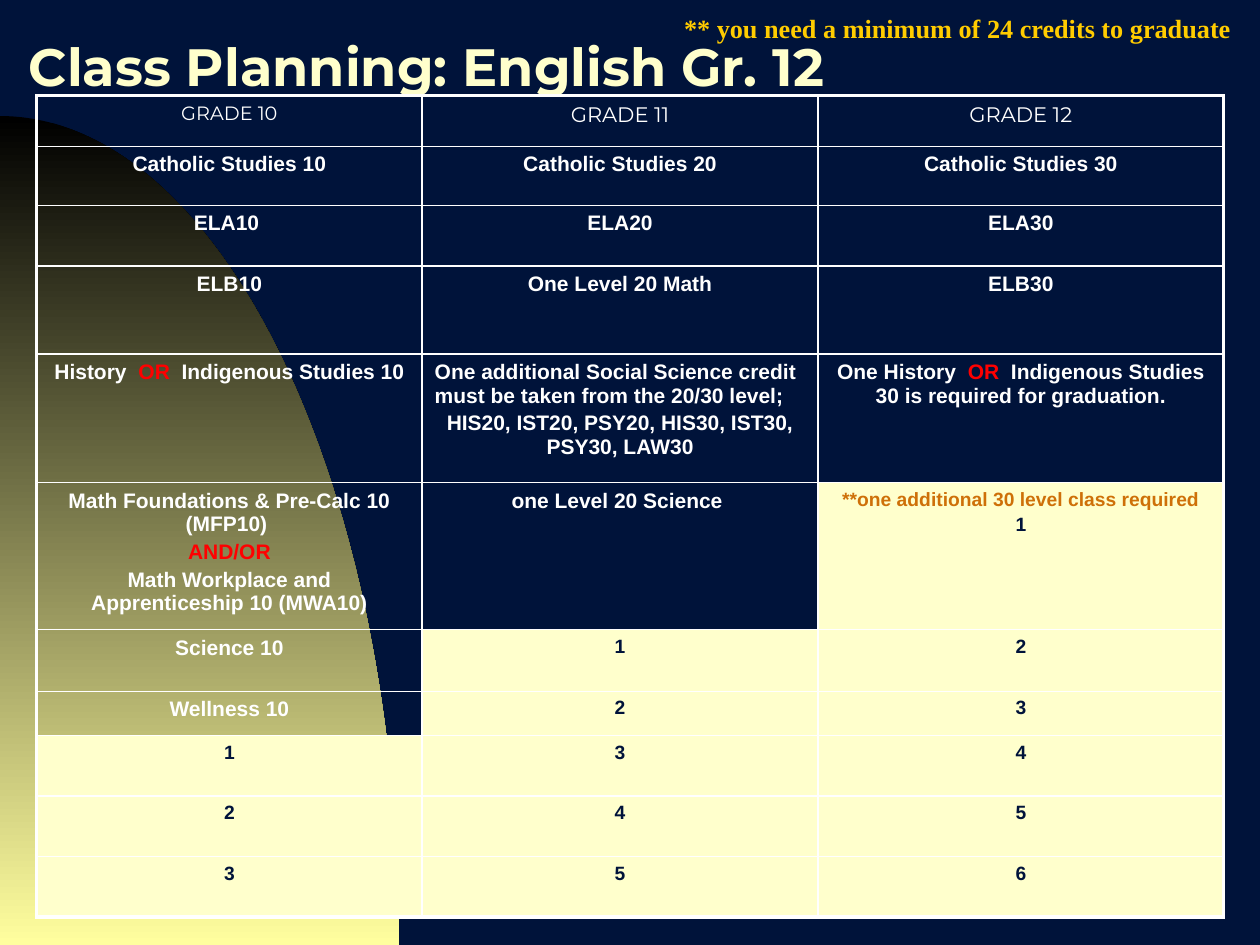
from dataclasses import dataclass
from math import cos, pi, sin

from lxml.etree import SubElement
from pptx import Presentation
from pptx.dml.color import RGBColor as RGB
from pptx.enum.text import MSO_ANCHOR as Anchor, PP_ALIGN as Align
from pptx.oxml.ns import qn
from pptx.util import Cm, Pt


@dataclass(frozen=True)
class Theme:
    navy: RGB = RGB(0x00, 0x13, 0x3A)
    cream: RGB = RGB(0xFF, 0xFF, 0xCC)
    white: RGB = RGB(0xFF, 0xFF, 0xFF)
    red: RGB = RGB(0xFF, 0x00, 0x00)
    orange: RGB = RGB(0xCE, 0x70, 0x08)
    gold: RGB = RGB(0xFF, 0xCC, 0x00)
    black: RGB = RGB(0x00, 0x00, 0x00)
    glow: RGB = RGB(0xFF, 0xFE, 0x9E)
    title_size: Pt = Pt(30)
    note_size: Pt = Pt(15)
    class_size: Pt = Pt(12)
    small_size: Pt = Pt(11)
    outer_line: Pt = Pt(2.25)
    inner_line: Pt = Pt(1)


theme = Theme()


def style(font, name, size, color, bold):
    font.name, font.size, font.bold = name, size, bold
    font.color.rgb = color


def set_border(cell, side, width):
    line = SubElement(cell._tc.get_or_add_tcPr(), qn(f"a:{side}"), w=str(width))
    SubElement(SubElement(line, qn("a:solidFill")), qn("a:srgbClr"), val=str(theme.white))


prs = Presentation()
prs.slide_width, prs.slide_height = Cm(25.4), Cm(19.05)
slide = prs.slides.add_slide(prs.slide_layouts[6])
slide.background.fill.solid()
slide.background.fill.fore_color.rgb = theme.navy

# Quarter ellipse rising from the lower left corner
radius_x, radius_y, steps = Cm(8.05), Cm(16.71), 90
arc = [(radius_x * sin(i * pi / 2 / steps),
        prs.slide_height - radius_y * cos(i * pi / 2 / steps)) for i in range(steps + 1)]
outline = slide.shapes.build_freeform(*arc[0])
outline.add_line_segments(arc[1:] + [(0, prs.slide_height)], close=True)
hill = outline.convert_to_shape()
hill.shadow.inherit = False
hill.line.fill.background()
hill.fill.gradient()
hill.fill.gradient_angle = 270
for stop, color, position in zip(hill.fill.gradient_stops, (theme.black, theme.glow), (0, 1)):
    stop.color.rgb = color
    stop.position = position

# Title
title = slide.shapes.add_textbox(Cm(0.33), Cm(0.81), Cm(21.59), Cm(1.32)).text_frame
title.word_wrap = True
title.vertical_anchor = Anchor.MIDDLE
heading = title.paragraphs[0]
heading.text = "Class Planning: English Gr. 12"
heading.line_spacing = 0.7
style(heading.font, "Montserrat", theme.title_size, theme.cream, True)

# Class plan: "|" encloses red words, "<" starts a left-aligned paragraph,
# and a cell that ends in a bare number is an elective slot
plan = [
    ("GRADE 10", "GRADE 11", "GRADE 12"),
    ("Catholic Studies 10", "Catholic Studies 20", "Catholic Studies 30"),
    ("ELA10 ", "ELA20", "ELA30"),
    ("ELB10", "One Level 20 Math", "ELB30"),
    ("History  |OR|  Indigenous Studies 10",
     "<One additional Social Science credit must be taken from the 20/30 level;\n"
     "HIS20, IST20, PSY20, HIS30, IST30, PSY30, LAW30",
     "One History  |OR|  Indigenous Studies 30 is required for graduation."),
    ("Math Foundations & Pre-Calc 10 (MFP10) \n|AND/OR|\n"
     "Math Workplace and Apprenticeship 10 (MWA10)",
     "one Level 20 Science ",
     "**one additional 30 level class required\n1"),
    ("Science 10", "1", "2"),
    ("Wellness 10", "2", "3"),
    ("1", "3", "4"),
    ("2", "4", "5"),
    ("3", "5", "6"),
]
column_widths = [7.77, 7.98, 8.18]
row_heights = [1.02, 1.19, 1.22, 1.78, 2.59, 2.79, 1.24, 0.89, 1.22, 1.22, 1.22]
last_row, last_column = len(row_heights) - 1, len(column_widths) - 1

table = slide.shapes.add_table(len(row_heights), len(column_widths), Cm(0.74), Cm(1.93),
                               Cm(sum(column_widths)), Cm(sum(row_heights))).table
table.first_row = table.horz_banding = False
for column, width in zip(table.columns, column_widths):
    column.width = Cm(width)
for row, height in zip(table.rows, row_heights):
    row.height = Cm(height)

for r, classes in enumerate(plan):
    for c, entry in enumerate(classes):
        cell = table.cell(r, c)
        lines = entry.split("\n")
        elective = lines[-1].isdigit()

        # Borders come before the fill in the cell properties
        for side, outer in (("lnL", c == 0), ("lnR", c == last_column),
                            ("lnT", r == 0), ("lnB", r == last_row)):
            set_border(cell, side, theme.outer_line if outer else theme.inner_line)
        if elective:
            cell.fill.solid()
            cell.fill.fore_color.rgb = theme.cream
        else:
            cell.fill.background()

        # Wording
        size = theme.small_size if elective or (r, c) == (0, 0) else theme.class_size
        for i, line in enumerate(lines):
            frame = cell.text_frame
            paragraph = frame.add_paragraph() if i else frame.paragraphs[0]
            paragraph.alignment = Align.LEFT if line.startswith("<") else Align.CENTER
            paragraph.space_before = Pt(size.pt * 0.2)
            color = (theme.orange if line.startswith("**")
                     else theme.navy if elective else theme.white)
            style(paragraph.font, "Arial" if r else "Montserrat", size, color, r > 0)
            for k, words in enumerate(line.lstrip("<").split("|")):
                if words:
                    run = paragraph.add_run()
                    run.text = words
                    style(run.font, paragraph.font.name, size,
                          theme.red if k % 2 else color, r > 0)

# Credit reminder
reminder = slide.shapes.add_textbox(Cm(13.54), Cm(0.13), Cm(16.92), Cm(0.89)).text_frame
reminder.word_wrap = True
note = reminder.paragraphs[0]
note.text = "** you need a minimum of 24 credits to graduate"
style(note.font, "Times New Roman", theme.note_size, theme.gold, True)

prs.save("out.pptx")
